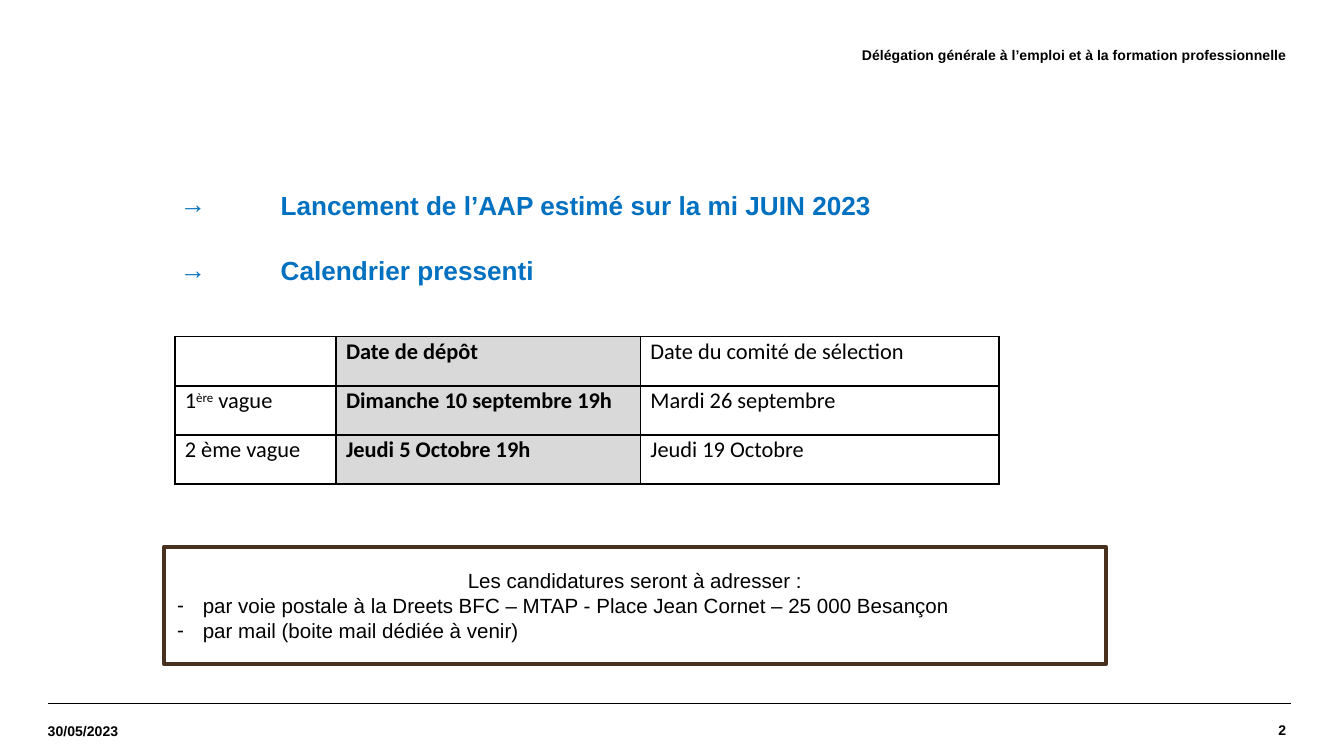
from lxml.etree import SubElement
from pptx import Presentation
from pptx.dml.color import RGBColor
from pptx.enum.shapes import MSO_CONNECTOR, MSO_SHAPE
from pptx.enum.text import MSO_ANCHOR, PP_ALIGN
from pptx.oxml.ns import qn
from pptx.util import Emu, Pt

PX = 4572
BLACK, WHITE, BLUE, GREY, BROWN = "000000", "FFFFFF", "0070C0", "D9D9D9", "49311F"

SLIDE_SIZE = (2000, 1125)
RULES = [(71, 1914), (78, 1921)]
RULE_TOP = 1047
LABELS = [
    ("2", (1618, 1047, 296, 78), PP_ALIGN.RIGHT),
    ("30/05/2023", (71, 1050, 264, 75), PP_ALIGN.LEFT),
    ("Délégation générale à l’emploi et à la formation professionnelle",
     (628, 42, 1286, 78), PP_ALIGN.RIGHT),
]
HEADINGS = ["Lancement de l’AAP estimé sur la mi JUIN 2023", "Calendrier pressenti"]
HEADINGS_AREA = (244, 270, 1480, 167)
TABLE_PLACE = (260, 501)
COLUMNS = [240, 453, 534]
ROW_HEIGHT = 73
HIGHLIGHT = 1
CALENDAR = [
    [[], ["Date de dépôt"], ["Date du comité de sélection"]],
    [["1", ("ère", 30000), " vague"], ["Dimanche 10 septembre 19h"], ["Mardi 26 septembre"]],
    [["2 ème vague"], ["Jeudi 5 Octobre 19h"], ["Jeudi 19 Octobre"]],
]
ADDRESS_AREA = (244, 814, 1402, 174)
ADDRESS_TITLE = "Les candidatures seront à adresser :"
ADDRESSES = [
    "par voie postale à la Dreets BFC – MTAP - Place Jean Cornet – 25 000 Besançon",
    "par mail (boite mail dédiée à venir)",
]


def px(*lengths):
    return [Emu(length * PX) for length in lengths]


def color(value):
    return RGBColor.from_string(value)


def write(frame, parts, size=11, font="Arial", fill=BLACK, bold=False, align=PP_ALIGN.LEFT,
          bullet=None, indent=(0, 0), before=0, after=0, spacing=1.0):
    para = frame.paragraphs[0]
    if para.runs:
        para = frame.add_paragraph()
    if bullet:
        properties = para._p.get_or_add_pPr()
        margin, first = px(*indent)
        properties.set("marL", str(margin))
        properties.set("indent", str(first))
        SubElement(properties, qn("a:buFont"), typeface="Arial")
        SubElement(properties, qn("a:buChar"), char=bullet)
    para.alignment = align
    para.space_before, para.space_after = Pt(before), Pt(after)
    para.line_spacing = spacing
    for part in [parts] if isinstance(parts, str) else parts:
        text, baseline = (part, 0) if isinstance(part, str) else part
        span = para.add_run()
        span.text = text
        span.font.size, span.font.name, span.font.bold = Pt(size), font, bold
        span.font.color.rgb = color(fill)
        if baseline:
            span._r.get_or_add_rPr().set("baseline", str(baseline))


def add_text(page, area, inset=False):
    frame = page.shapes.add_textbox(*px(*area)).text_frame
    frame.word_wrap = True
    frame.vertical_anchor = MSO_ANCHOR.MIDDLE
    if not inset:
        frame.margin_left = frame.margin_right = frame.margin_top = frame.margin_bottom = 0
    return frame


def add_borders(cell):
    properties = cell._tc.get_or_add_tcPr()
    for place, side in enumerate(("a:lnL", "a:lnR", "a:lnT", "a:lnB")):
        line = SubElement(properties, qn(side), w=str(Pt(1)))
        SubElement(SubElement(line, qn("a:solidFill")), qn("a:srgbClr"), val=BLACK)
        properties.insert(place, line)


def add_calendar(page):
    area = (*TABLE_PLACE, sum(COLUMNS), ROW_HEIGHT * len(CALENDAR))
    table = page.shapes.add_table(len(CALENDAR), len(COLUMNS), *px(*area)).table
    for column, width in zip(table.columns, px(*COLUMNS)):
        column.width = width
    for row, texts in enumerate(CALENDAR):
        table.rows[row].height = px(ROW_HEIGHT)[0]
        for column, parts in enumerate(texts):
            cell = table.cell(row, column)
            highlighted = column == HIGHLIGHT
            cell.margin_left, cell.margin_right = px(15, 15)
            cell.margin_top = cell.margin_bottom = 0
            cell.fill.solid()
            cell.fill.fore_color.rgb = color(GREY if highlighted else WHITE)
            add_borders(cell)
            write(cell.text_frame, parts, size=12, font="Calibri", bold=highlighted,
                  align=PP_ALIGN.JUSTIFY, after=6, spacing=1.07)


def add_addresses(page):
    box = page.shapes.add_shape(MSO_SHAPE.RECTANGLE, *px(*ADDRESS_AREA))
    box.shadow.inherit = False
    box.fill.solid()
    box.fill.fore_color.rgb = color(WHITE)
    box.line.color.rgb = color(BROWN)
    box.line.width = Pt(2)
    frame = box.text_frame
    frame.word_wrap = True
    frame.vertical_anchor = MSO_ANCHOR.MIDDLE
    write(frame, ADDRESS_TITLE, align=PP_ALIGN.CENTER)
    for address in ADDRESSES:
        write(frame, address, bullet="-", indent=(38, -38))


def main():
    deck = Presentation()
    deck.slide_width, deck.slide_height = px(*SLIDE_SIZE)
    page = deck.slides.add_slide(deck.slide_layouts[6])
    for start, end in RULES:
        rule = page.shapes.add_connector(
            MSO_CONNECTOR.STRAIGHT, *px(start, RULE_TOP, end, RULE_TOP))
        rule.line.color.rgb = color(BLACK)
        rule.line.width = Pt(0.8)
        SubElement(rule._element.spPr, qn("a:effectLst"))
    for text, area, align in LABELS:
        write(add_text(page, area), text, size=7.5, bold=True, align=align)
    frame = add_text(page, HEADINGS_AREA, inset=True)
    for number, heading in enumerate(HEADINGS):
        write(frame, heading, size=14, fill=BLUE, bold=True, bullet="→",
              indent=(154, -150), before=18.5 if number else 0)
    add_calendar(page)
    add_addresses(page)
    deck.save("out.pptx")


if __name__ == "__main__":
    main()
